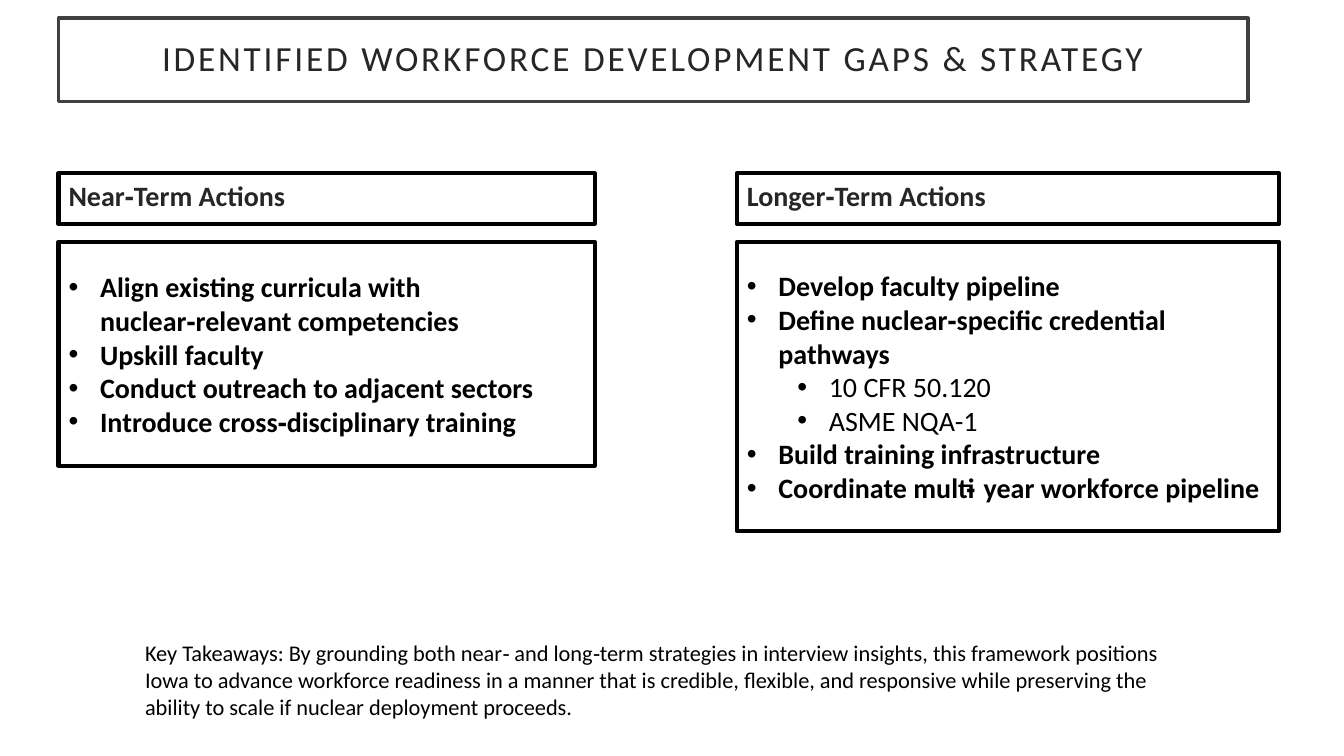
from dataclasses import dataclass

import pptx
import pptx.dml.color
import pptx.enum.text
import pptx.oxml
import pptx.shapes.autoshape
import pptx.text.text
import pptx.util

Pt = pptx.util.Pt
RGBColor = pptx.dml.color.RGBColor
Anchor = pptx.enum.text.MSO_ANCHOR
Align = pptx.enum.text.PP_ALIGN

BLACK = RGBColor(0x00, 0x00, 0x00)
WHITE = RGBColor(0xFF, 0xFF, 0xFF)
TITLE_LINE = RGBColor(0x40, 0x40, 0x40)
HEADING_TEXT = RGBColor(0x26, 0x26, 0x26)

FONT = "Calibri"
COMPARISON_LAYOUT = 4
HEADING_TOP, HEADING_HEIGHT = 123.84, 36
LIST_TOP = 172.8
BULLET_INDENT = 22.5
LEVEL_STEP = 36


@dataclass
class Item:
    text: str
    level: int = 0


@dataclass
class Column:
    heading: str
    heading_index: int
    list_index: int
    left: float
    width: float
    list_height: float
    items: list[Item]


COLUMNS = [
    Column("Near‑Term Actions", 1, 2, 41.76, 383.04, 159.84, [
        Item("Align existing curricula with nuclear‑relevant competencies"),
        Item("Upskill faculty"),
        Item("Conduct outreach to adjacent sectors"),
        Item("Introduce cross‑disciplinary training"),
    ]),
    Column("Longer‑Term Actions", 3, 4, 526.32, 387.36, 206.64, [
        Item("Develop faculty pipeline"),
        Item("Define nuclear‑specific credential pathways"),
        Item("10 CFR 50.120", 1),
        Item("ASME NQA-1", 1),
        Item("Build training infrastructure"),
        Item("Coordinate multi‑year workforce pipeline"),
    ]),
]


def place(box: pptx.shapes.autoshape.Shape, left: float, top: float,
          width: float, height: float) -> None:
    box.left, box.top = Pt(left), Pt(top)
    box.width, box.height = Pt(width), Pt(height)


def frame(box: pptx.shapes.autoshape.Shape, line_color: RGBColor,
          line_width: float, anchor: Anchor) -> None:
    box.fill.solid()
    box.fill.fore_color.rgb = WHITE
    box.line.color.rgb = line_color
    box.line.width = Pt(line_width)
    box.text_frame.auto_size = pptx.enum.text.MSO_AUTO_SIZE.NONE
    box.text_frame.word_wrap = True
    box.text_frame.vertical_anchor = anchor


def style(para: pptx.text.text._Paragraph, size: float, color: RGBColor,
          bold: bool = False) -> None:
    para.space_before = para.space_after = Pt(0)
    for span in para.runs:
        span.font.name = FONT
        span.font.size = Pt(size)
        span.font.bold = bold
        span.font.color.rgb = color


def add_bullet(para: pptx.text.text._Paragraph, level: int) -> None:
    para.level = level
    properties = para._p.get_or_add_pPr()
    properties.set("marL", str(Pt(BULLET_INDENT + LEVEL_STEP * level)))
    properties.set("indent", str(Pt(-BULLET_INDENT)))
    namespace = pptx.oxml.ns.nsdecls("a")
    for tag in (f'<a:buFont {namespace} typeface="Arial"/>',
                f'<a:buChar {namespace} char="•"/>'):
        properties.append(pptx.oxml.parse_xml(tag))


def draw_title(box: pptx.shapes.autoshape.Shape) -> None:
    place(box, 41.76, 12.96, 849.6, 59.76)
    frame(box, TITLE_LINE, 2.5, Anchor.MIDDLE)
    text = box.text_frame
    text.margin_left = text.margin_right = Pt(14.4)
    text.margin_top = text.margin_bottom = Pt(14.4)
    text.text = "IDENTIFIED WORKFORCE DEVELOPMENT GAPS & STRATEGY"
    para = text.paragraphs[0]
    para.alignment = Align.CENTER
    para.line_spacing = 0.9
    style(para, 25.2, HEADING_TEXT)
    para.runs[0].font._element.set("spc", "200")


def draw_column(page: pptx.slide.Slide, column: Column) -> None:
    boxes = {box.placeholder_format.idx: box for box in page.placeholders}

    heading = boxes[column.heading_index]
    place(heading, column.left, HEADING_TOP, column.width, HEADING_HEIGHT)
    frame(heading, BLACK, 3, Anchor.TOP)
    heading.text_frame.text = column.heading
    style(heading.text_frame.paragraphs[0], 20, HEADING_TEXT, bold=True)

    actions = boxes[column.list_index]
    place(actions, column.left, LIST_TOP, column.width, column.list_height)
    frame(actions, BLACK, 3, Anchor.MIDDLE)
    actions.text_frame.text = "\n".join(item.text for item in column.items)
    for para, item in zip(actions.text_frame.paragraphs, column.items):
        add_bullet(para, item.level)
        style(para, 20, BLACK, bold=item.level == 0)


def draw_takeaways(page: pptx.slide.Slide) -> None:
    box = page.shapes.add_textbox(Pt(96.48), Pt(452.88), Pt(766.8), Pt(87.12))
    box.text_frame.word_wrap = True
    box.text_frame.text = (
        "Key Takeaways: By grounding both near‑ and long‑term strategies in "
        "interview insights, this framework positions Iowa to advance "
        "workforce readiness in a manner that is credible, flexible, and "
        "responsive while preserving the ability to scale if nuclear "
        "deployment proceeds.")
    style(box.text_frame.paragraphs[0], 16, BLACK)


def main() -> None:
    deck = pptx.Presentation()
    deck.slide_width, deck.slide_height = Pt(960), Pt(540)
    page = deck.slides.add_slide(deck.slide_layouts[COMPARISON_LAYOUT])

    # Title
    draw_title(page.shapes.title)

    # Headings and action lists
    for column in COLUMNS:
        draw_column(page, column)

    # Closing message
    draw_takeaways(page)

    deck.save("out.pptx")


if __name__ == "__main__":
    main()
